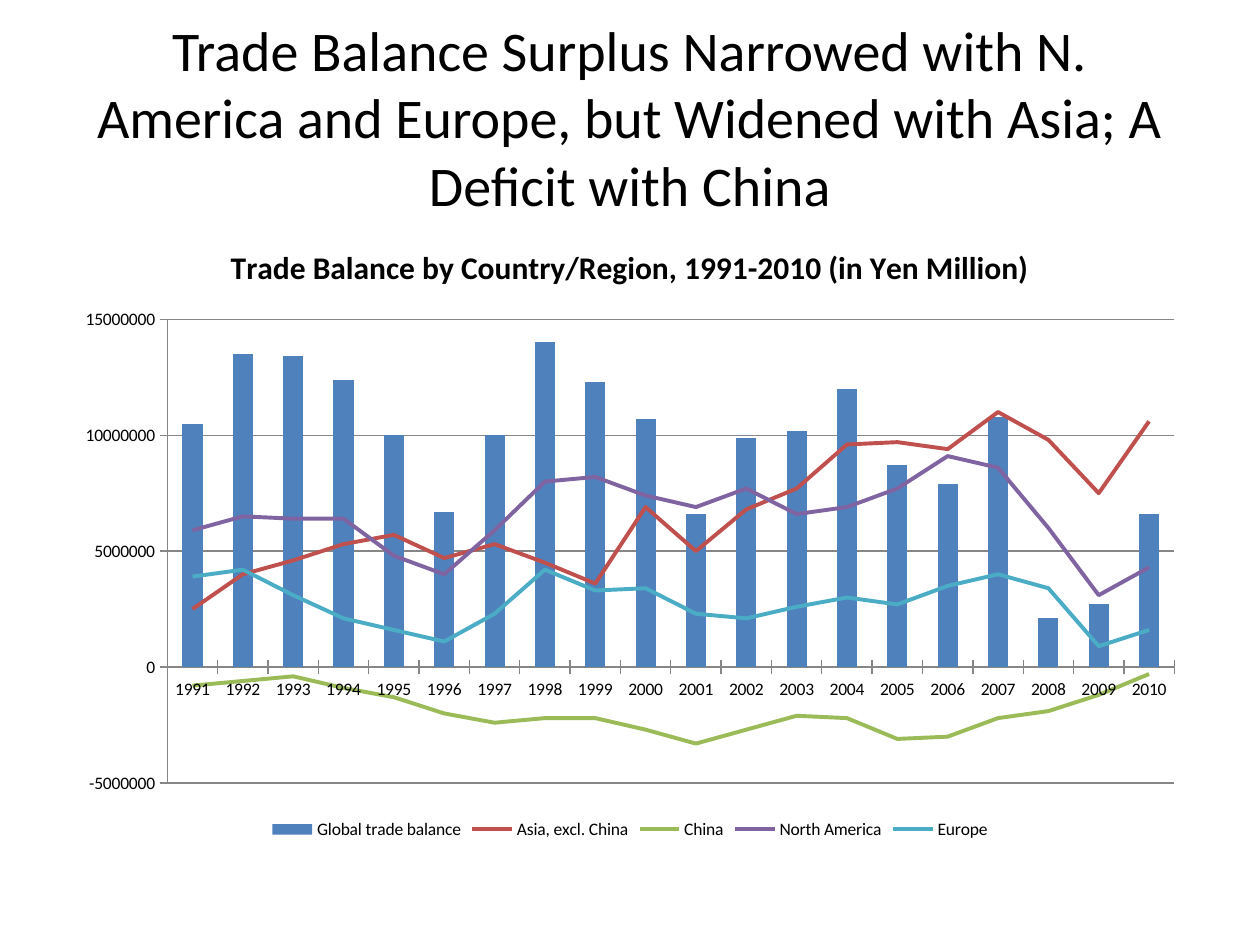
"""Build a slide with a combined column and line chart of trade balances."""
from dataclasses import dataclass

from lxml import etree
from pptx import Presentation
from pptx import util as u
from pptx.chart import data as cd
from pptx.dml.color import RGBColor
from pptx.enum import chart as ce
from pptx.enum import text
from pptx.oxml import ns

FONT = "Calibri"
BLACK = RGBColor(0x00, 0x00, 0x00)
GREY = RGBColor(0x86, 0x86, 0x86)
BLUE = RGBColor(0x4F, 0x81, 0xBD)
RED = RGBColor(0xC0, 0x50, 0x4D)
GREEN = RGBColor(0x9B, 0xBB, 0x59)
PURPLE = RGBColor(0x80, 0x64, 0xA2)
TEAL = RGBColor(0x4B, 0xAC, 0xC6)
UNIT = 100_000
YEARS = range(1991, 2011)


@dataclass(frozen=True)
class Balance:
    name: str
    color: RGBColor
    values: tuple[int, ...]


BALANCES = (
    Balance("Global trade balance", BLUE,
            (105, 135, 134, 124, 100, 67, 100, 140, 123, 107,
             66, 99, 102, 120, 87, 79, 108, 21, 27, 66)),
    Balance("Asia, excl. China", RED,
            (25, 40, 46, 53, 57, 47, 53, 45, 36, 69,
             50, 68, 77, 96, 97, 94, 110, 98, 75, 106)),
    Balance("China", GREEN,
            (-8, -6, -4, -9, -13, -20, -24, -22, -22, -27,
             -33, -27, -21, -22, -31, -30, -22, -19, -12, -3)),
    Balance("North America", PURPLE,
            (59, 65, 64, 64, 48, 40, 59, 80, 82, 74,
             69, 77, 66, 69, 77, 91, 86, 60, 31, 43)),
    Balance("Europe", TEAL,
            (39, 42, 31, 21, 16, 11, 23, 42, 33, 34,
             23, 21, 26, 30, 27, 35, 40, 34, 9, 16)),
)


def apply(obj, formats: dict) -> None:
    """Set each named attribute on the object."""
    for name, value in formats.items():
        setattr(obj, name, value)


def set_font(font, size: int, bold: bool = False) -> None:
    """Give a font the slide's typeface and colour."""
    apply(font, {"name": FONT, "size": u.Pt(size), "bold": bold})
    font.color.rgb = BLACK


def add_title(s, title: str) -> None:
    """Add the centred slide title."""
    sp = s.shapes.add_textbox(u.Cm(1.27), u.Cm(0.76), u.Cm(22.86), u.Cm(3.18))
    tf = sp.text_frame
    apply(tf, {"word_wrap": True, "vertical_anchor": text.MSO_ANCHOR.MIDDLE})
    p = tf.paragraphs[0]
    p.alignment = text.PP_ALIGN.CENTER
    r = p.add_run()
    r.text = title
    set_font(r.font, 32)


def move_to_lines(chart, first: int) -> None:
    """Move the column series from the given index on to a line plot."""
    bars = chart.plots[0]._element
    lines = bars.makeelement(ns.qn("c:lineChart"))
    for tag, val in (("grouping", "standard"), ("varyColors", "0")):
        etree.SubElement(lines, ns.qn(f"c:{tag}"), val=val)
    for ser in bars.findall(ns.qn("c:ser"))[first:]:
        for invert in ser.findall(ns.qn("c:invertIfNegative")):
            ser.remove(invert)
        lines.append(ser)
    etree.SubElement(lines, ns.qn("c:marker"), val="1")
    for axis_id in bars.findall(ns.qn("c:axId")):
        etree.SubElement(lines, ns.qn("c:axId"), val=axis_id.get("val"))
    bars.addnext(lines)


def add_balance_chart(s, title: str, balances: tuple[Balance, ...]) -> None:
    """Add the chart with the first balance as columns and the rest as lines."""
    data = cd.CategoryChartData()
    data.categories = [str(year) for year in YEARS]
    for b in balances:
        data.add_series(b.name, [v * UNIT for v in b.values])
    chart = s.shapes.add_chart(
        ce.XL_CHART_TYPE.COLUMN_CLUSTERED,
        u.Cm(1.27), u.Cm(4.45), u.Cm(22.86), u.Cm(12.57), data).chart
    set_font(chart.font, 10)
    move_to_lines(chart, 1)

    columns, lines = chart.plots
    apply(columns, {"gap_width": 150, "vary_by_categories": False})
    fill = columns.series[0].format.fill
    fill.solid()
    fill.fore_color.rgb = balances[0].color
    for series, b in zip(lines.series, balances[1:]):
        series.smooth = False
        series.marker.style = ce.XL_MARKER_STYLE.NONE
        series.format.line.width = u.Pt(2.25)
        series.format.line.color.rgb = b.color

    apply(chart, {"has_title": True, "has_legend": True})
    p = chart.chart_title.text_frame.paragraphs[0]
    r = p.add_run()
    r.text = title
    set_font(r.font, 18, bold=True)
    apply(chart.legend, {"position": ce.XL_LEGEND_POSITION.BOTTOM, "include_in_layout": False})

    apply(chart.value_axis, {"minimum_scale": -50 * UNIT, "maximum_scale": 150 * UNIT,
                             "major_unit": 50 * UNIT, "has_major_gridlines": True})
    for axis in (chart.category_axis, chart.value_axis):
        axis.major_tick_mark = ce.XL_TICK_MARK.CROSS
        axis.format.line.color.rgb = GREY
    chart.value_axis.major_gridlines.format.line.color.rgb = GREY


def main() -> None:
    """Create the presentation and save it."""
    prs = Presentation()
    apply(prs, {"slide_width": u.Cm(25.4), "slide_height": u.Cm(19.05)})
    s = prs.slides.add_slide(prs.slide_layouts[6])
    add_title(s, "Trade Balance Surplus Narrowed with N. America and Europe, "
                 "but Widened with Asia; A Deficit with China")
    add_balance_chart(s, "Trade Balance by Country/Region, 1991-2010 (in Yen Million)", BALANCES)
    prs.save("out.pptx")


if __name__ == "__main__":
    main()
